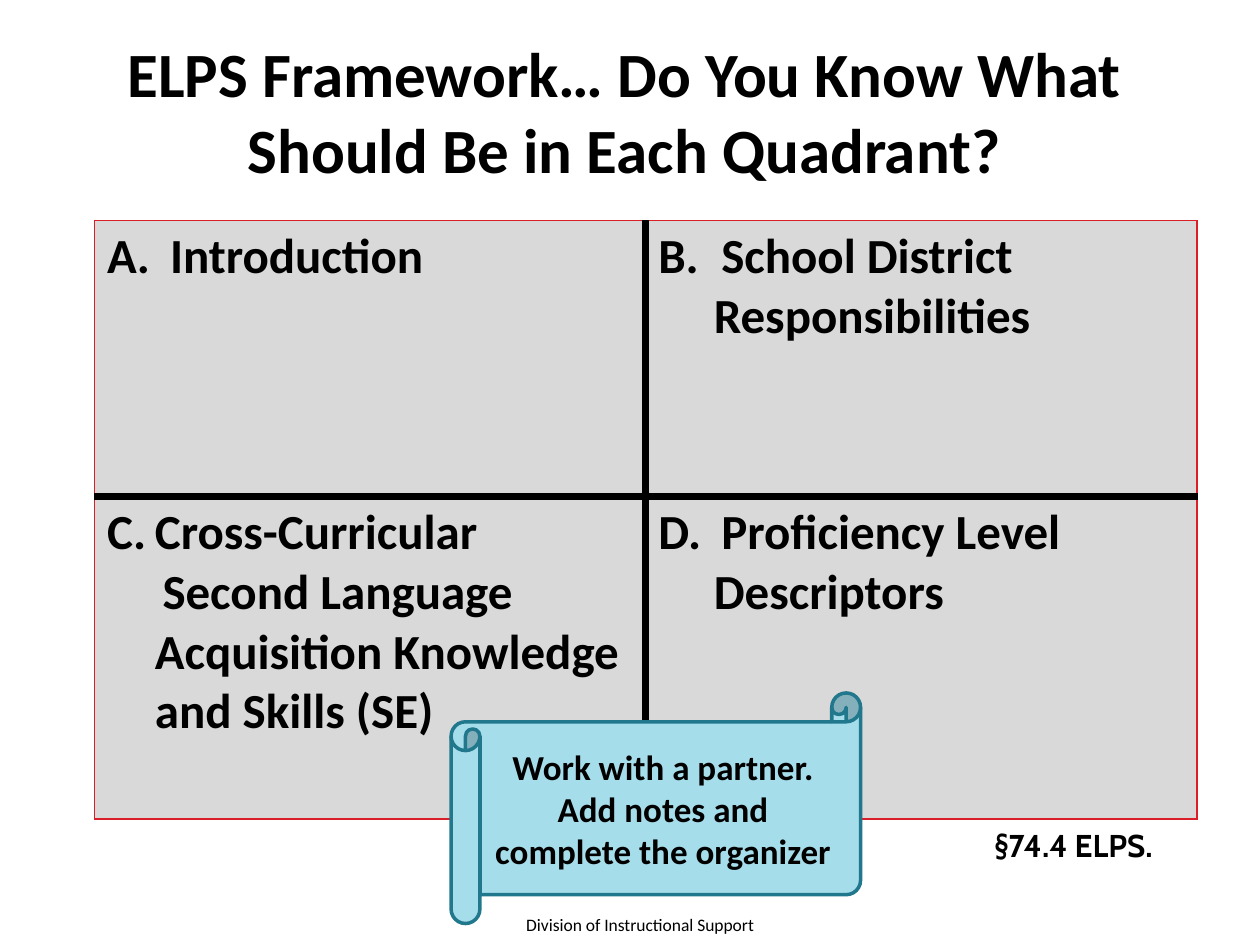
from lxml import etree
from pptx import Presentation
from pptx.dml.color import RGBColor
from pptx.enum.shapes import MSO_SHAPE
from pptx.enum.text import MSO_ANCHOR, MSO_AUTO_SIZE, PP_ALIGN
from pptx.oxml.ns import qn
from pptx.util import Inches, Pt

SCROLL = MSO_SHAPE.HORIZONTAL_SCROLL
CENTER = PP_ALIGN.CENTER
TOP, MIDDLE = MSO_ANCHOR.TOP, MSO_ANCHOR.MIDDLE
GROW = MSO_AUTO_SIZE.SHAPE_TO_FIT_TEXT

BLACK, RED, GREY = "000000", "DA1F28", "D9D9D9"
AQUA, TEAL = "A6DDEA", "21788D"
OUTER_EDGE, INNER_EDGE = (RED, 1), (BLACK, 4.5)


def color(hex_value):
    return RGBColor.from_string(hex_value)


def set_border(cell, tag, position, edge):
    """Add one cell border; position keeps the borders ahead of the fill."""
    hex_value, width = edge
    line = etree.Element(qn(f"a:{tag}"), w=str(Pt(width)))
    fill = etree.SubElement(line, qn("a:solidFill"))
    etree.SubElement(fill, qn("a:srgbClr"), val=hex_value)
    cell._tc.get_or_add_tcPr().insert(position, line)


def set_indent(paragraph, left, first, number=None):
    """Set left and first-line indents, and an optional letter to number from."""
    properties = paragraph._p.get_or_add_pPr()
    properties.set("marL", str(Inches(left)))
    properties.set("indent", str(Inches(first)))
    if number:
        etree.SubElement(properties, qn("a:buAutoNum"),
                         type="alphaUcPeriod", startAt=str(number))


class SlideBuilder:
    def __init__(self, slide, font="Calibri"):
        self.slide = slide
        self.font = font

    def add_run(self, paragraph, text, size, **changes):
        run = paragraph.add_run()
        run.text = text
        style = {"name": self.font, "size": Pt(size), "bold": True, **changes}
        for name, value in style.items():
            setattr(run.font, name, value)
        run.font.color.rgb = color(BLACK)

    def fill_frame(self, frame, text, size, anchor, wrap=True, **changes):
        frame.word_wrap = wrap
        frame.vertical_anchor = anchor
        paragraph = frame.paragraphs[0]
        paragraph.alignment = CENTER
        self.add_run(paragraph, text, size, **changes)

    def text(self, box, text, size, anchor=MIDDLE, wrap=True, **changes):
        frame = self.slide.shapes.add_textbox(*map(Inches, box)).text_frame
        self.fill_frame(frame, text, size, anchor, wrap, **changes)
        return frame

    def scroll(self, box, text, size):
        shape = self.slide.shapes.add_shape(SCROLL, *map(Inches, box))
        shape.shadow.inherit = False
        shape.fill.solid()
        shape.fill.fore_color.rgb = color(AQUA)
        shape.line.color.rgb = color(TEAL)
        shape.line.width = Pt(2)
        self.fill_frame(shape.text_frame, text, size, MIDDLE)

    def quadrants(self, box, heights, contents, size):
        """Draw a table with thin outer edges and a thick inner cross."""
        rows, columns = len(contents), len(contents[0])
        table = self.slide.shapes.add_table(
            rows, columns, *map(Inches, box)).table
        for row, height in zip(table.rows, heights):
            row.height = Inches(height)
        for r, row_contents in enumerate(contents):
            for c, lines in enumerate(row_contents):
                cell = table.cell(r, c)
                cell.fill.solid()
                cell.fill.fore_color.rgb = color(GREY)
                outer = {"lnL": c == 0, "lnR": c == columns - 1,
                         "lnT": r == 0, "lnB": r == rows - 1}
                for position, (tag, is_outer) in enumerate(outer.items()):
                    set_border(cell, tag, position,
                               OUTER_EDGE if is_outer else INNER_EDGE)
                frame = cell.text_frame
                for index, (text, *indent) in enumerate(lines):
                    paragraph = (frame.add_paragraph() if index
                                 else frame.paragraphs[0])
                    set_indent(paragraph, *indent)
                    self.add_run(paragraph, text, size)


def main():
    presentation = Presentation()
    presentation.slide_width = Inches(10)
    presentation.slide_height = Inches(7.5)
    slide = presentation.slides.add_slide(presentation.slide_layouts[6])
    builder = SlideBuilder(slide)

    builder.text((0.83, 0.25, 8.25, 1.25),
                 "ELPS Framework… Do You Know What Should Be in Each Quadrant?",
                 36)

    # Each line: text, left indent, first-line indent, optional start number
    heading, continuation = (0.5, -0.5), (0.44, 0)
    contents = [
        [[("A.\tIntroduction", *heading)],
         [("B.\tSchool District", *heading),
          ("Responsibilities", *continuation)]],
        [[("Cross-Curricular", 0.38, -0.38, 3),
          ("Second Language Acquisition Knowledge and Skills (SE)",
           0.38, 0.06)],
         [("D.\tProficiency Level", *heading),
          ("Descriptors", *continuation)]],
    ]
    builder.quadrants((0.75, 1.75, 8.75, 4.75), (2.19, 2.56), contents, 28)

    citation = builder.text((7.63, 6.51, 1.78, 0.4), "§74.4 ELPS.", 18,
                            anchor=TOP, wrap=False, name="Cabin")
    citation.auto_size = GROW
    builder.text((3.58, 7.17, 3, 0.33), "Division of Instructional Support",
                 10, bold=False)
    builder.scroll((3.58, 5.5, 3.25, 1.83),
                   "Work with a partner. Add notes and complete the organizer",
                   20)
    presentation.save("out.pptx")


if __name__ == "__main__":
    main()
